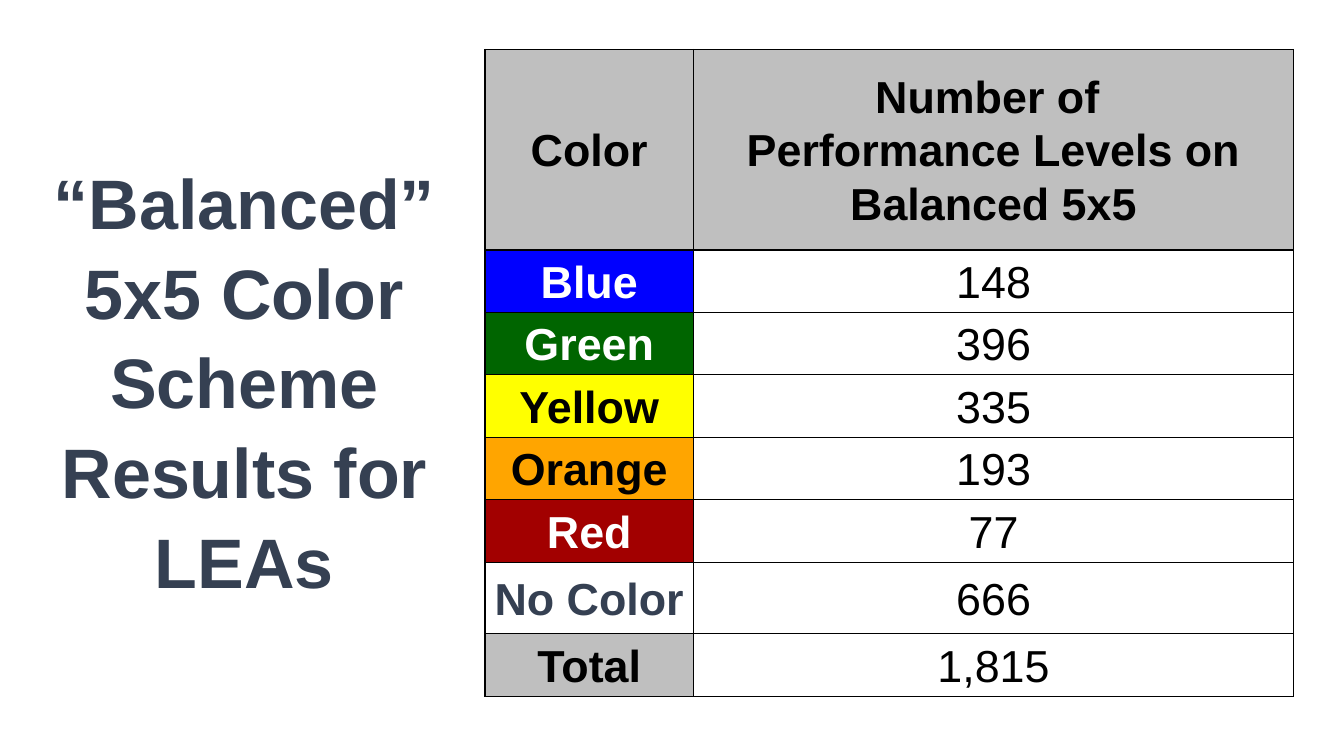
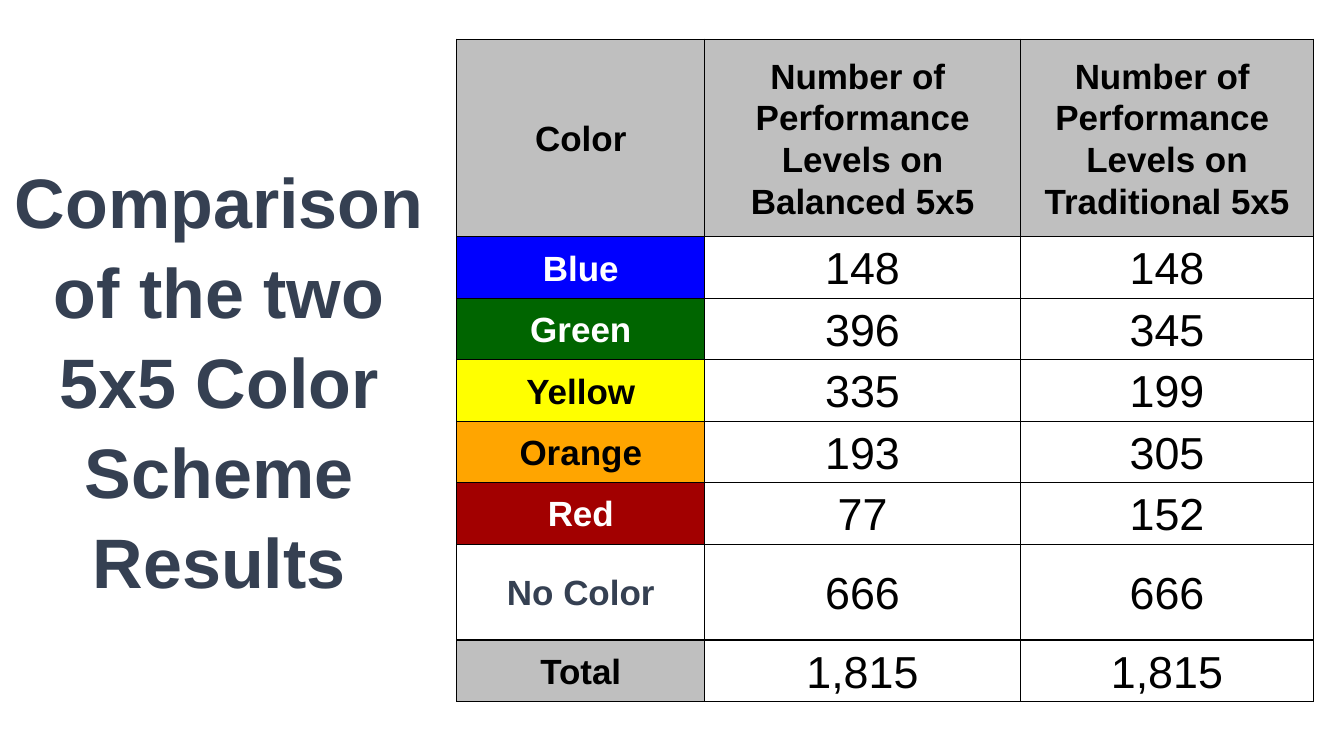
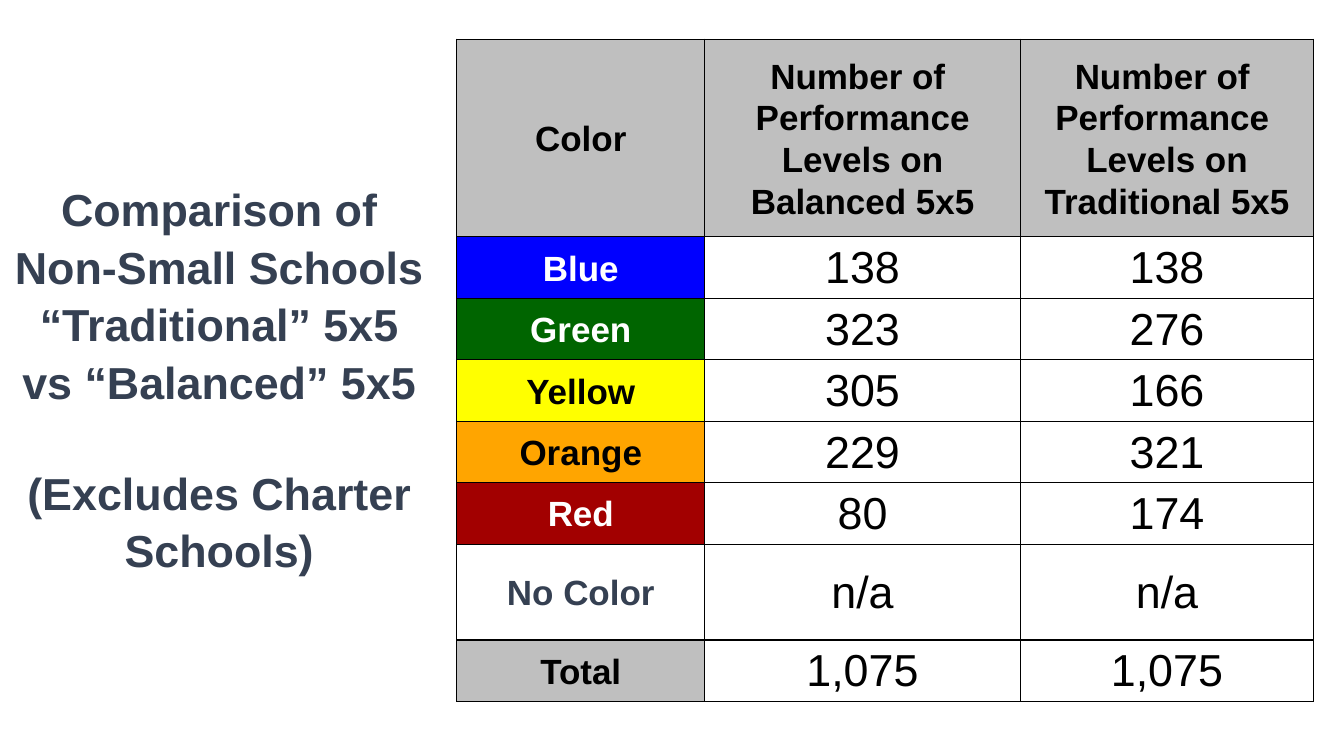
from lxml import etree
from pptx import Presentation
from pptx.dml.color import RGBColor
from pptx.enum.text import MSO_ANCHOR, MSO_AUTO_SIZE, PP_ALIGN
from pptx.oxml.ns import qn
from pptx.util import Inches, Pt

MIDDLE = MSO_ANCHOR.MIDDLE
CENTER = PP_ALIGN.CENTER
NO_FIT = MSO_AUTO_SIZE.NONE

FONT = "Arial"
SPACING = 1.07
BLACK = RGBColor(0x00, 0x00, 0x00)
WHITE = RGBColor(0xFF, 0xFF, 0xFF)
SLATE = RGBColor(0x35, 0x40, 0x52)
GRAY = RGBColor(0xBF, 0xBF, 0xBF)
BLUE = RGBColor(0x00, 0x00, 0xFF)
GREEN = RGBColor(0x00, 0x65, 0x00)
YELLOW = RGBColor(0xFF, 0xFF, 0x00)
ORANGE = RGBColor(0xFF, 0xA5, 0x00)
RED = RGBColor(0xA2, 0x00, 0x00)

LEVELS = [
    ("Blue", BLUE, WHITE),
    ("Green", GREEN, WHITE),
    ("Yellow", YELLOW, BLACK),
    ("Orange", ORANGE, BLACK),
    ("Red", RED, WHITE),
    ("No Color", WHITE, SLATE),
    ("Total", GRAY, BLACK),
]

WIDE_HEAD = "Number of \vPerformance Levels on\vBalanced 5x5"
PAIR_HEADS = [
    "Number of \vPerformance Levels on\vBalanced 5x5",
    "Number of \vPerformance \vLevels on\vTraditional 5x5",
]
BALANCED = ["148", "396", "335", "193", "77", "666", "1,815"]
TRADITIONAL = ["148", "345", "199", "305", "152", "666", "1,815"]
SCHOOL_BALANCED = ["138", "323", "305", "229", "80", "n/a", "1,075"]
SCHOOL_TRADITIONAL = ["138", "276", "166", "321", "174", "n/a", "1,075"]

WIDE_BOX = (0.39, 0.48, 4.07, 6.54)
PAIR_BOX = (0, 0.39, 4.35, 6.71)
WIDE_GRID = {
    "at": (4.81, 0.49),
    "cols": [2.07, 5.95],
    "rows": [1.99] + [0.62] * 5 + [0.71, 0.62],
    "size": 32,
}
PAIR_GRID = {
    "at": (4.53, 0.39),
    "cols": [2.46, 3.13, 2.91],
    "rows": [1.96] + [0.61] * 5 + [0.95, 0.61],
    "size": 25,
}
VALUE_SIZE = 32


def style(para, size, color, bold, spacing=SPACING):
    para.alignment = CENTER
    para.line_spacing = spacing
    font = para.font
    font.name = FONT
    font.size = Pt(size)
    font.bold = bold
    font.color.rgb = color


def set_title(slide, lines, box, size):
    title = slide.shapes.title
    title.left, title.top, title.width, title.height = map(Inches, box)
    frame = title.text_frame
    frame.word_wrap = True
    frame.auto_size = NO_FIT
    frame.vertical_anchor = MIDDLE
    frame.text = "\n".join(lines)
    for index, para in enumerate(frame.paragraphs):
        style(para, size, SLATE, True)
        para.space_before = Pt(size * 1.2 if index else 0)


def add_border(cell):
    props = cell._tc.get_or_add_tcPr()
    for index, side in enumerate(("a:lnL", "a:lnR", "a:lnT", "a:lnB")):
        line = etree.Element(qn(side), w=str(Pt(1)))
        fill = etree.SubElement(line, qn("a:solidFill"))
        etree.SubElement(fill, qn("a:srgbClr"), val=str(BLACK))
        props.insert(index, line)


def fill_cell(cell, text, fill, color, size, bold, tight=False):
    cell.fill.solid()
    cell.fill.fore_color.rgb = fill
    cell.vertical_anchor = MIDDLE
    cell.margin_left = cell.margin_right = Inches(0.01 if tight else 0.07)
    cell.margin_top = Inches(0.01 if tight else 0)
    cell.margin_bottom = 0
    cell.text = text
    style(cell.text_frame.paragraphs[0], size, color, bold, 1.0 if tight else SPACING)
    add_border(cell)


def add_grid(slide, grid, heads, series, tight):
    cols, rows, size = grid["cols"], grid["rows"], grid["size"]
    left, top = grid["at"]
    frame = slide.shapes.add_table(
        len(rows), len(cols), Inches(left), Inches(top),
        Inches(sum(cols)), Inches(sum(rows)),
    )
    table = frame.table
    table.first_row = False
    table.horz_banding = False
    for col, width in zip(table.columns, cols):
        col.width = Inches(width)
    for row, height in zip(table.rows, rows):
        row.height = Inches(height)
    for col, head in enumerate(["Color"] + heads):
        fill_cell(table.cell(0, col), head, GRAY, BLACK, size, True)
    for row, (name, fill, color) in enumerate(LEVELS, 1):
        fill_cell(table.cell(row, 0), name, fill, color, size, True)
        for col, values in enumerate(series, 1):
            fill_cell(table.cell(row, col), values[row - 1], WHITE, BLACK,
                      VALUE_SIZE, False, tight)


def add_page(deck, lines, box, size, grid, heads, series, tight=False):
    slide = deck.slides.add_slide(deck.slide_layouts[5])
    set_title(slide, lines, box, size)
    add_grid(slide, grid, heads, series, tight)


def main():
    deck = Presentation()
    deck.slide_width = Inches(13.33)
    deck.slide_height = Inches(7.5)
    add_page(deck, ["“Balanced” 5x5 Color Scheme Results for LEAs"],
             WIDE_BOX, 50, WIDE_GRID, [WIDE_HEAD], [BALANCED])
    add_page(deck, ["Comparison of the two 5x5 Color Scheme Results"],
             PAIR_BOX, 50, PAIR_GRID, PAIR_HEADS, [BALANCED, TRADITIONAL])
    add_page(deck,
             ["Comparison of\vNon-Small Schools “Traditional” 5x5 vs “Balanced” 5x5",
              "(Excludes Charter Schools)"],
             PAIR_BOX, 32, PAIR_GRID, PAIR_HEADS,
             [SCHOOL_BALANCED, SCHOOL_TRADITIONAL], tight=True)
    deck.save("out.pptx")


if __name__ == "__main__":
    main()
